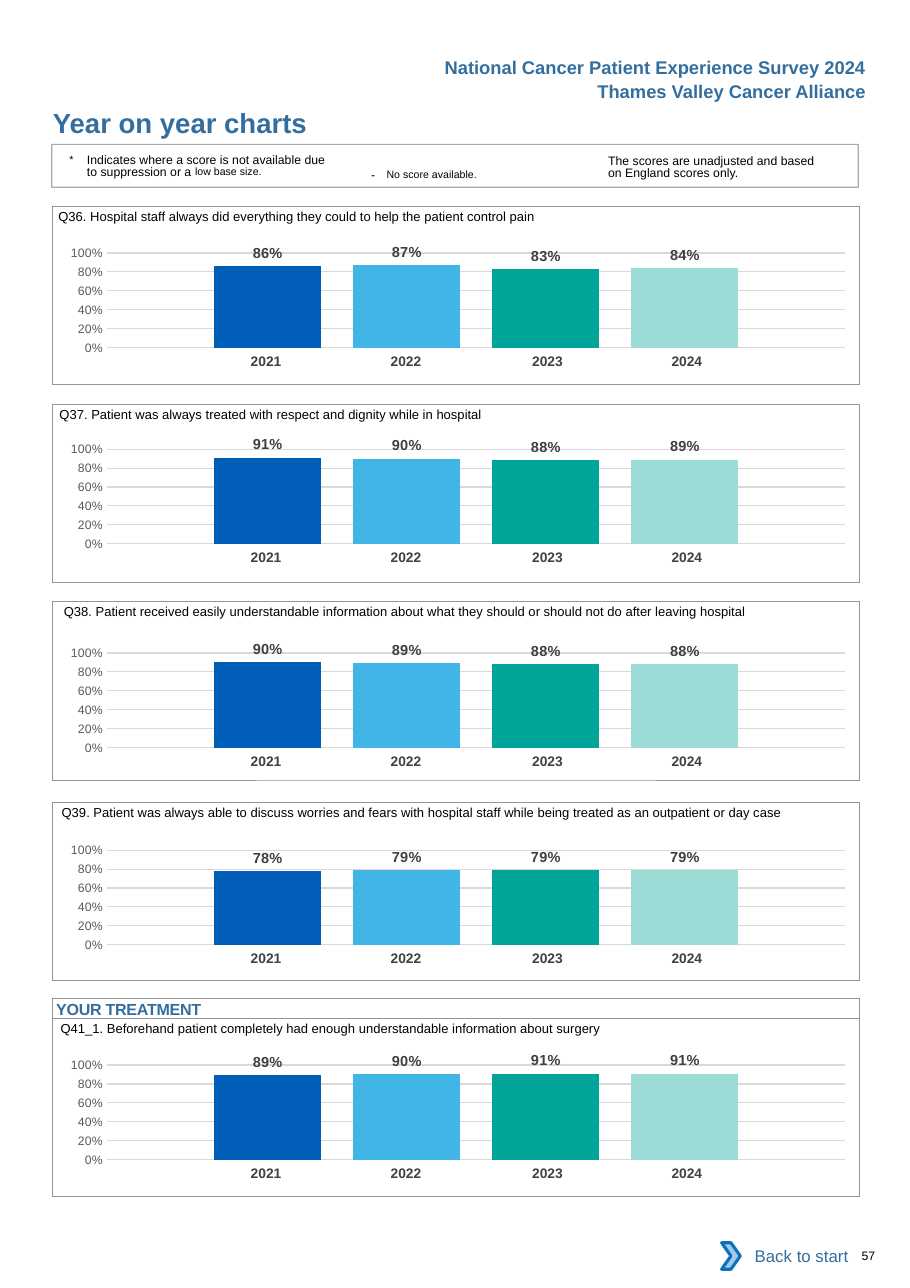
from lxml import etree
from pptx import Presentation
from pptx import util as u
from pptx.chart.data import CategoryChartData
from pptx.dml.color import RGBColor
from pptx.enum import chart as charts, shapes, text
from pptx.oxml import parse_xml
from pptx.oxml.ns import nsdecls, qn

BLUE = RGBColor(0x33, 0x6E, 0x9F)
BLACK = RGBColor(0, 0, 0)
WHITE = RGBColor(0xFF, 0xFF, 0xFF)
FRAME_GREY = RGBColor(0x93, 0x95, 0x98)
YEAR_GREY = RGBColor(0x41, 0x40, 0x42)
LABEL_GREY = RGBColor(0x40, 0x40, 0x40)
AXIS_GREY = RGBColor(0x59, 0x59, 0x59)
GRID_GREY = RGBColor(0xD9, 0xD9, 0xD9)
CHEVRON_FILL = RGBColor(0xA8, 0xC7, 0xE9)
CHEVRON_LINE = RGBColor(0x0A, 0x74, 0xBB)
BAR_COLOURS = [RGBColor(0x00, 0x5E, 0xB8), RGBColor(0x41, 0xB6, 0xE6),
               RGBColor(0x00, 0xA4, 0x99), RGBColor(0x9C, 0xDC, 0xD7)]
YEARS = ["2021", "2022", "2023", "2024"]

FRAME_LEFT, FRAME_WIDTH, FRAME_HEIGHT = 0.48, 7.32, 1.62
# panel top, chart top, question left, question, scores by year
PANELS = [
    (1.87, 2.11, 0.53, "Q36. Hospital staff always did everything they could to help "
     "the patient control pain", (0.86, 0.87, 0.83, 0.84)),
    (3.67, 3.89, 0.54, "Q37. Patient was always treated with respect and dignity "
     "while in hospital", (0.91, 0.90, 0.88, 0.89)),
    (5.46, 5.74, 0.58, "Q38. Patient received easily understandable information about what "
     "they should or should not do after leaving hospital", (0.90, 0.89, 0.88, 0.88)),
    (7.28, 7.53, 0.56, "Q39. Patient was always able to discuss worries and fears with hospital "
     "staff while being treated as an outpatient or day case", (0.78, 0.79, 0.79, 0.79)),
    (9.24, 9.48, 0.55, "Q41_1. Beforehand patient completely had enough understandable "
     "information about surgery", (0.89, 0.90, 0.91, 0.91)),
]


def inches(*lengths):
    return [u.Inches(length) for length in lengths]


def style_font(font, size, color, bold=False, name="Arial"):
    font.size, font.bold, font.name = u.Pt(size), bold, name
    font.color.rgb = color


def write_text(frame, content, size=8, color=BLACK, bold=False, align=text.PP_ALIGN.LEFT,
               insets=(0, 0, 0, 0), anchor=text.MSO_ANCHOR.TOP, wrap=True,
               line_spacing=None, hanging=0):
    """Fill a frame with a string or a list of (text, size, spacing, baseline) runs."""
    frame.word_wrap, frame.vertical_anchor = wrap, anchor
    (frame.margin_left, frame.margin_top,
     frame.margin_right, frame.margin_bottom) = inches(*insets)
    paragraph = frame.paragraphs[0]
    paragraph.alignment = align
    if line_spacing:
        paragraph.line_spacing = u.Pt(line_spacing)
    if hanging:
        properties = paragraph._p.get_or_add_pPr()
        properties.set("marL", str(u.Inches(hanging)))
        properties.set("indent", str(-u.Inches(hanging)))
    runs = [(content, size, 0, 0)] if isinstance(content, str) else content
    for words, run_size, spacing, baseline in runs:
        run = paragraph.add_run()
        run.text = words
        style_font(run.font, run_size, color, bold)
        if spacing:
            run._r.get_or_add_rPr().set("spc", str(round(spacing * 100)))
        if baseline:
            run._r.get_or_add_rPr().set("baseline", str(baseline * 1000))


class SurveyPage:
    def __init__(self, presentation):
        self.slide = presentation.slides.add_slide(presentation.slide_layouts[6])

    def label(self, left, top, width, height, content, **style):
        box = self.slide.shapes.add_textbox(*inches(left, top, width, height))
        write_text(box.text_frame, content, **style)

    def shape(self, left, top, width, height, fill=None, line=None, line_width=0.5,
              kind=shapes.MSO_SHAPE.RECTANGLE):
        shape = self.slide.shapes.add_shape(kind, *inches(left, top, width, height))
        shape.shadow.inherit = False
        for part, color in ((shape.fill, fill), (shape.line.fill, line)):
            if color is None:
                part.background()
            else:
                part.solid()
                part.fore_color.rgb = color
        if line is not None:
            shape.line.width = u.Pt(line_width)
        return shape

    def years(self, top):
        table = self.slide.shapes.add_table(1, 4, *inches(1.73, top, 5.15, 0.27)).table
        table.first_row = table.horz_banding = False
        columns = zip(YEARS, (1.27, 1.27, 1.34, 1.27), (0, 0, 0.04, 0.12))
        for index, (year, width, right_inset) in enumerate(columns):
            table.columns[index].width = u.Inches(width)
            cell = table.cell(0, index)
            cell.fill.background()
            (cell.margin_left, cell.margin_top,
             cell.margin_right, cell.margin_bottom) = inches(0.1, 0.05, right_inset, 0.05)
            paragraph = cell.text_frame.paragraphs[0]
            paragraph.alignment = text.PP_ALIGN.CENTER
            run = paragraph.add_run()
            run.text = year
            style_font(run.font, 9, YEAR_GREY, True)

    def chart(self, top, scores):
        data = CategoryChartData(number_format="0%")
        data.categories = ["1"]
        for number, score in enumerate(scores, 1):
            data.add_series(f"Series {number}", [score])
        chart = self.slide.shapes.add_chart(
            charts.XL_CHART_TYPE.COLUMN_CLUSTERED, *inches(0.39, top, 7.32, 1.29), data).chart
        chart.has_legend = chart.has_title = False
        style_font(chart.font, 10, BLACK, name="Calibri")
        chart.category_axis.visible = False

        axis = chart.value_axis
        axis.minimum_scale, axis.maximum_scale, axis.major_unit = 0, 1, 0.2
        axis.major_tick_mark = axis.minor_tick_mark = charts.XL_TICK_MARK.NONE
        axis.format.line.fill.background()
        axis.major_gridlines.format.line.color.rgb = GRID_GREY
        axis.major_gridlines.format.line.width = u.Pt(0.75)
        axis.tick_labels.number_format = "0%"
        axis.tick_labels.number_format_is_linked = False
        style_font(axis.tick_labels.font, 8, AXIS_GREY)

        plot = chart.plots[0]
        plot.gap_width, plot.overlap, plot.vary_by_categories = 200, -30, False
        for series, color in zip(plot.series, BAR_COLOURS):
            series.format.fill.solid()
            series.format.fill.fore_color.rgb = color
            labels = series.data_labels
            labels.show_value = True
            labels.position = charts.XL_LABEL_POSITION.OUTSIDE_END
            labels.number_format, labels.number_format_is_linked = "0%", False
            style_font(labels.font, 9.5, LABEL_GREY, True)
        self.place_plot(chart, x=0.08, y=0.145, w=0.915, h=0.666)

    def place_plot(self, chart, **fractions):
        """Fix the inner plot area as fractions of the chart."""
        area = chart._chartSpace.chart.plotArea
        for old in area.findall(qn("c:layout")):
            area.remove(old)
        modes = '<c:layoutTarget val="inner"/><c:xMode val="edge"/><c:yMode val="edge"/>'
        sizes = "".join(f'<c:{key} val="{value}"/>' for key, value in fractions.items())
        area.insert(0, parse_xml(f'<c:layout {nsdecls("c")}><c:manualLayout>{modes}{sizes}'
                                 '</c:manualLayout></c:layout>'))

    def panel(self, top, chart_top, question_left, question, scores):
        self.years(chart_top + 1.05)
        self.chart(chart_top, scores)
        self.label(question_left, top - 0.07, 7.24, 0.24, question, size=8.5,
                   insets=(0, 0.09, 0, 0))
        self.shape(FRAME_LEFT, top, FRAME_WIDTH, FRAME_HEIGHT, line=FRAME_GREY)

    def key(self):
        """Notes on missing scores, in a frame under the title."""
        self.label(5.52, 1.38, 1.95, 0.27, "The scores are unadjusted and based on England "
                   "scores only.", insets=(0, 0.03, 0, 0), line_spacing=8.1)
        self.label(3.27, 1.41, 1.83, 0.24,
                   [("- ", 8, 2.6, 0), ("No score available.", 12, 0, 3)],
                   insets=(0.1, 0.05, 0.1, 0.05))
        self.label(0.63, 1.38, 2.36, 0.27,
                   [("*\t", 12, 0, 3),
                    ("Indicates where a score is not available due to suppression or a ", 8, 0, 0),
                    ("low base size.", 12, 0, 7)],
                   insets=(0, 0.03, 0, 0), line_spacing=8.1, hanging=0.16)
        frame = self.shape(0.47, 1.31, FRAME_WIDTH, 0.39, line=FRAME_GREY, line_width=0.75)
        color = frame.line.fill._xPr.find(qn("a:solidFill"))[0]
        etree.SubElement(color, qn("a:alpha")).set("val", "80000")


def main():
    presentation = Presentation()
    presentation.slide_width, presentation.slide_height = inches(8.26, 11.69)
    page = SurveyPage(presentation)

    heading = dict(size=12, color=BLUE, bold=True, align=text.PP_ALIGN.RIGHT,
                   insets=(0.1, 0.05, 0.1, 0.05), wrap=False)
    page.label(3.92, 0.46, 4.04, 0.3, "National Cancer Patient Experience Survey 2024", **heading)
    page.label(5.28, 0.68, 2.68, 0.3, "Thames Valley Cancer Alliance", **heading)
    page.label(0.48, 0.96, 4.5, 0.3, "Year on year charts", size=18, color=BLUE, bold=True)
    page.key()

    for panel in PANELS:
        page.panel(*panel)
    section = page.shape(FRAME_LEFT, 9.06, FRAME_WIDTH, 0.18, line=FRAME_GREY)
    write_text(section.text_frame, [("YOUR TREATMENT", 10.5, -0.15, 0)], color=BLUE, bold=True,
               insets=(0.03, 0.01, 0, 0))

    back = page.shape(6.62, 11.19, 1.18, 0.42, fill=WHITE)
    write_text(back.text_frame, "Back to start", size=11, color=BLUE, align=text.PP_ALIGN.RIGHT,
               insets=(0.1, 0.05, 0.1, 0.05), anchor=text.MSO_ANCHOR.MIDDLE)
    page.shape(6.55, 11.28, 0.17, 0.24, fill=CHEVRON_FILL, line=CHEVRON_LINE, line_width=2,
               kind=shapes.MSO_SHAPE.CHEVRON)
    page.label(7.82, 11.33, 0.41, 0.13, "57")
    presentation.save("out.pptx")


if __name__ == "__main__":
    main()
